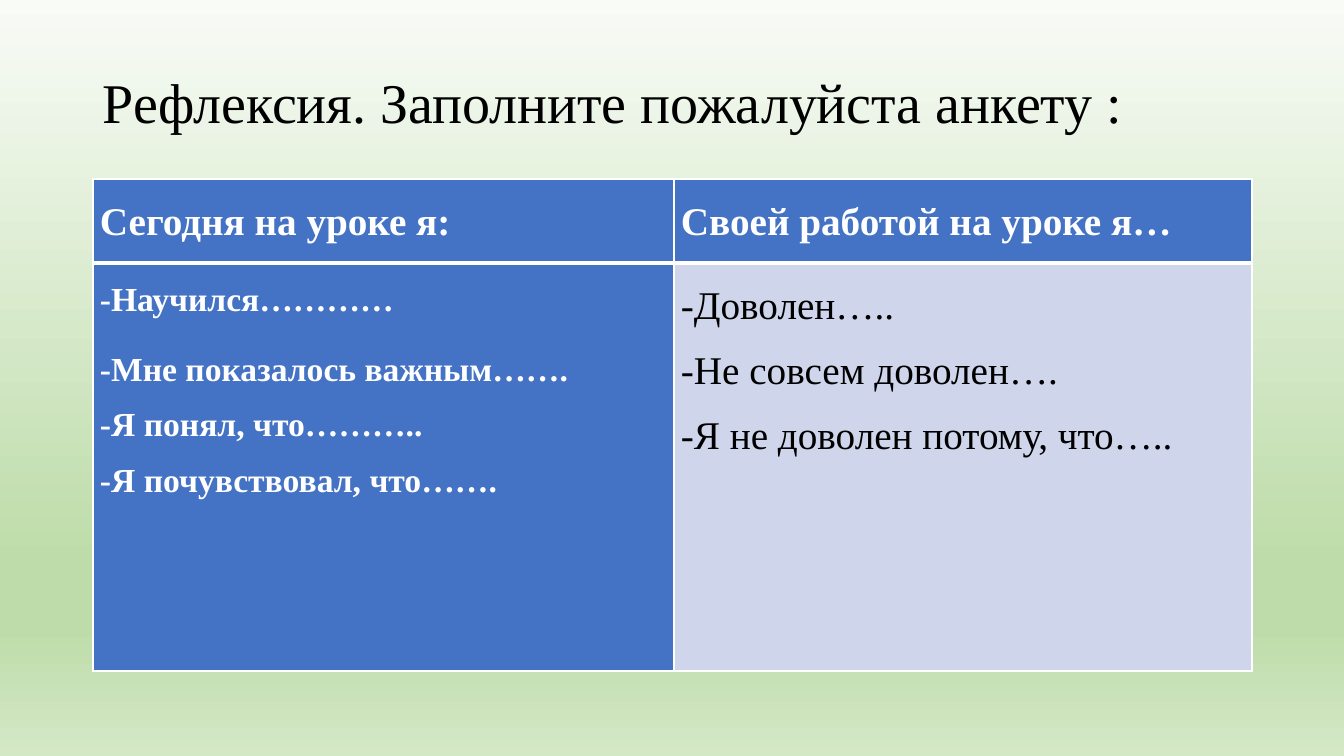
"""Build the lesson reflection slide with its two-column questionnaire."""
from lxml.etree import SubElement
from pptx import Presentation
from pptx.dml.color import RGBColor as RGB
from pptx.enum.text import MSO_ANCHOR as ANCHOR, PP_ALIGN as ALIGN
from pptx.oxml.ns import qn
from pptx.util import Pt

PX = 12192000 / 1344
FONT = "Times New Roman"
COLORS = {"black": "000000", "white": "FFFFFF", "blue": "4472C4", "pale": "CFD5EA"}
BACKDROP = [(0, "F8FBF6"), (74, "BEDCAA"), (83, "BEDCAA"), (100, "D4E8C6")]


def px(*lengths):
    return [round(length * PX) for length in lengths]


def write(paragraph, words, spacing, size, color, bold=False):
    paragraph.line_spacing = spacing
    run = paragraph.add_run()
    run.text = words
    for name, value in {"name": FONT, "size": Pt(size), "bold": bold}.items():
        setattr(run.font, name, value)
    run.font.color.rgb = RGB.from_string(COLORS[color])


deck = Presentation()
deck.slide_width, deck.slide_height = px(1344, 756)
slide = deck.slides.add_slide(deck.slide_layouts[6])

backdrop = slide.background.fill
backdrop.gradient()
backdrop.gradient_angle = 270
stops = next(slide.element.iter(qn("a:gsLst")))
for stop in list(stops):
    stops.remove(stop)
for percent, color in BACKDROP:
    stop = SubElement(stops, qn("a:gs"), pos=str(percent * 1000))
    SubElement(stop, qn("a:srgbClr"), val=color)

title = slide.shapes.add_textbox(*px(93, 32, 1159, 146)).text_frame
title.word_wrap = True
title.vertical_anchor = ANCHOR.MIDDLE
write(title.paragraphs[0], "Рефлексия. Заполните пожалуйста анкету :", 0.9, 40, "black")

answers_learned = ["-Научился…………", "-Мне показалось важным…….",
                   "-Я понял, что………..", "-Я почувствовал, что……."]
answers_satisfied = ["-Доволен…..", "-Не совсем доволен….", "-Я не доволен потому, что….."]
questionnaire = [
    [(["Сегодня на уроке я:"], 28, "white", True, "blue"),
     (["Своей работой на уроке я…"], 28, "white", True, "blue")],
    [(answers_learned, 24, "white", True, "blue"),
     (answers_satisfied, 28, "black", False, "pale")],
]
borders = [{"lnL": 1, "lnR": 1, "lnT": 1, "lnB": 3},
           {"lnL": 1, "lnR": 1, "lnT": 3, "lnB": 1}]
cell_format = dict(zip(["margin_left", "margin_right", "margin_top", "margin_bottom"],
                       px(7, 7, 0, 0)))

table = slide.shapes.add_table(2, 2, *px(93, 179, 1159, 492)).table
table.first_row = table.horz_banding = False
for column, width in zip(table.columns, px(581, 578)):
    column.width = width
for row, height in zip(table.rows, px(84, 408)):
    row.height = height

for r, questions in enumerate(questionnaire):
    for c, (lines, size, color, bold, fill) in enumerate(questions):
        cell = table.cell(r, c)
        for name, value in cell_format.items():
            setattr(cell, name, value)
        properties = cell._tc.get_or_add_tcPr()
        for edge, points in borders[r].items():
            line = SubElement(properties, qn(f"a:{edge}"), w=str(Pt(points)))
            SubElement(SubElement(line, qn("a:solidFill")), qn("a:srgbClr"), val=COLORS["white"])
        cell.fill.solid()
        cell.fill.fore_color.rgb = RGB.from_string(COLORS[fill])
        frame = cell.text_frame
        for i, words in enumerate(lines):
            paragraph = frame.add_paragraph() if i else frame.paragraphs[0]
            paragraph.alignment = ALIGN.JUSTIFY
            write(paragraph, words, 1.5, size, color, bold)

table.cell(1, 0).text_frame.paragraphs[0].space_after = Pt(10)

deck.save("out.pptx")
